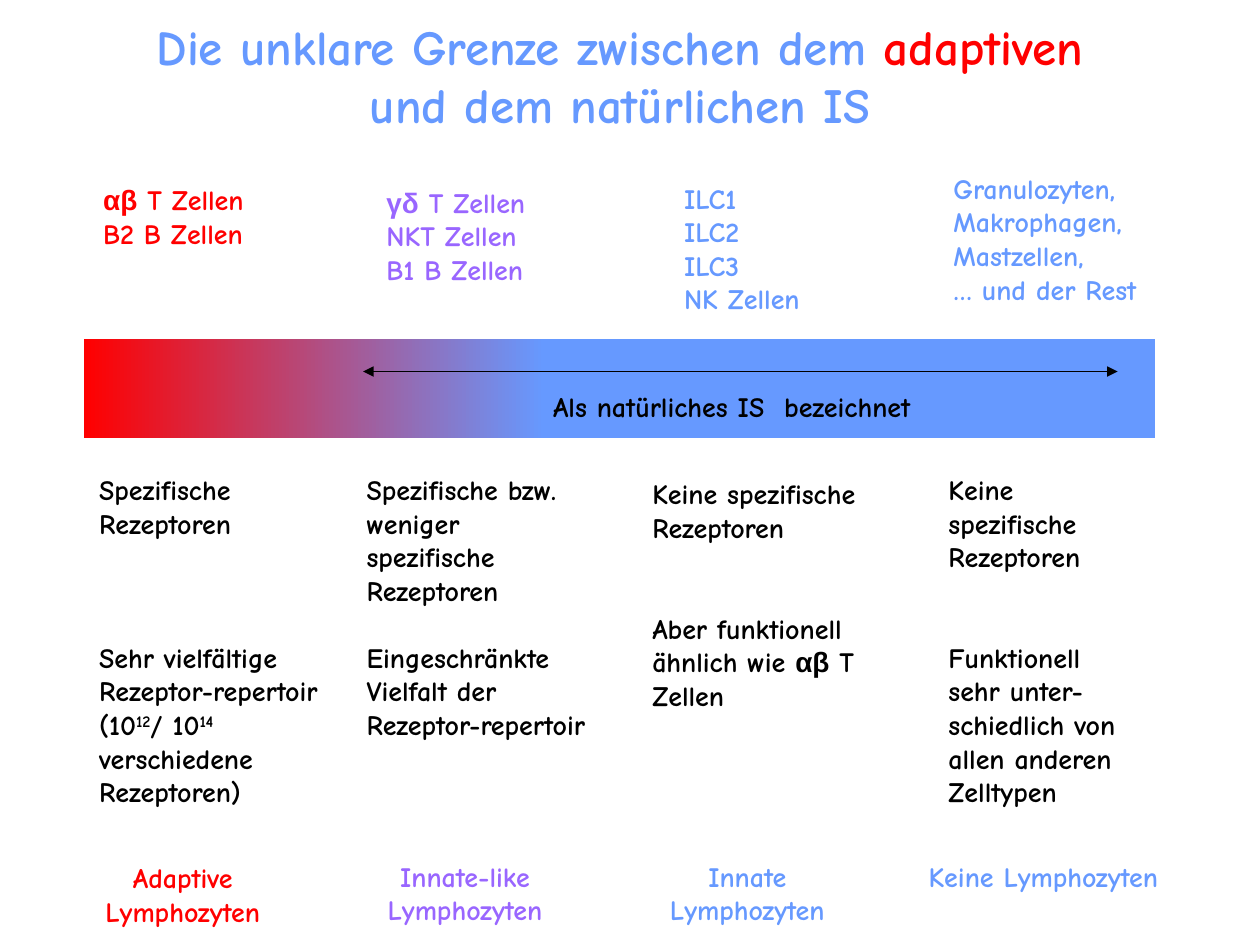
from dataclasses import dataclass

import pptx
import pptx.dml.color
import pptx.enum.dml
import pptx.enum.shapes
import pptx.enum.text
import pptx.oxml
import pptx.oxml.ns
import pptx.util
from pptx.util import Cm

RGB = pptx.dml.color.RGBColor.from_string
LEFT = pptx.enum.text.PP_ALIGN.LEFT
CENTER = pptx.enum.text.PP_ALIGN.CENTER


@dataclass(frozen=True)
class Theme:
    adaptive: str = "FF0000"
    innate_like: str = "9966FF"
    innate: str = "6699FF"
    ink: str = "000000"
    font: str = "Comic Neue"
    greek_font: str = "Arial"
    title_size: int = 28
    body_size: int = 16
    line_pitch: float = 19.2


THEME = Theme()


def greek(letters):
    return letters, {"font": THEME.greek_font}


def superscript(digits):
    return digits, {"baseline": 30000}


def add_run(paragraph, text, color, size, font=THEME.font, baseline=None):
    run = paragraph.add_run()
    run.text = text
    run.font.name = font
    run.font.size = pptx.util.Pt(size)
    run.font.bold = True
    run.font.color.rgb = RGB(color)
    if baseline:
        run.font._element.set("baseline", str(baseline))


def write(slide, box, paragraphs, color=THEME.ink, size=THEME.body_size,
          align=LEFT, wrap=True, gap_lines=0):
    """Each paragraph is a string or a list of strings and (string, format) pairs."""
    frame = slide.shapes.add_textbox(*map(Cm, box)).text_frame
    frame.word_wrap = wrap
    frame.auto_size = pptx.enum.text.MSO_AUTO_SIZE.SHAPE_TO_FIT_TEXT
    for index, parts in enumerate(paragraphs):
        paragraph = frame.add_paragraph() if index else frame.paragraphs[0]
        paragraph.alignment = align
        if index and gap_lines:
            paragraph.space_before = pptx.util.Pt(gap_lines * THEME.line_pitch)
        for part in [parts] if isinstance(parts, str) else parts:
            text, changes = (part, {}) if isinstance(part, str) else part
            add_run(paragraph, text, **{"color": color, "size": size, **changes})


def add_spectrum(slide, box):
    """Bar that fades from the adaptive to the innate colour."""
    bar = slide.shapes.add_shape(
        pptx.enum.shapes.MSO_SHAPE.RECTANGLE, *map(Cm, box))
    bar.shadow.inherit = False
    bar.line.fill.background()
    bar.fill.gradient()
    bar.fill.gradient_angle = 180
    stops = ((0.57, THEME.innate), (1, THEME.adaptive))
    for stop, (position, color) in zip(bar.fill.gradient_stops, stops):
        stop.position = position
        stop.color.rgb = RGB(color)


def add_double_arrow(slide, start, end, y):
    arrow = slide.shapes.add_connector(
        pptx.enum.shapes.MSO_CONNECTOR.STRAIGHT, Cm(start), Cm(y), Cm(end), Cm(y))
    arrow.line.color.rgb = RGB(THEME.ink)
    arrow.line.width = pptx.util.Pt(0.75)
    line = arrow.line._get_or_add_ln()
    for tag in ("a:headEnd", "a:tailEnd"):
        tip = pptx.oxml.parse_xml(f'<{tag} {pptx.oxml.ns.nsdecls("a")} type="triangle"/>')
        line.append(tip)
    arrow._element.spPr.append(
        pptx.oxml.parse_xml(f'<a:effectLst {pptx.oxml.ns.nsdecls("a")}/>'))


def add_cells(slide):
    groups = (
        ((1.83, 3.56, 3.73, 1.63), THEME.adaptive,
         [[greek("αβ"), " T Zellen"], "B2 B Zellen"]),
        ((7.54, 3.61, 3.73, 2.31), THEME.innate_like,
         [[greek("γδ"), " T Zellen"], "NKT Zellen", "B1 B Zellen"]),
        ((13.54, 3.53, 3.23, 3), THEME.innate,
         ["ILC1", "ILC2", "ILC3", "NK Zellen"]),
        ((18.97, 3.33, 4.72, 3), THEME.innate,
         ["Granulozyten,", "Makrophagen,", "Mastzellen,", "… und der Rest"]),
    )
    for box, color, cells in groups:
        write(slide, box, cells, color=color, wrap=False)


def add_receptors(slide):
    descriptions = (
        ((1.75, 9.4, 5.13, 7.77), 3,
         ["Spezifische Rezeptoren",
          ["Sehr vielfältige Rezeptor-repertoir (10", superscript("12"), "/ 10",
           superscript("14 "), "verschiedene Rezeptoren)"]]),
        ((7.14, 9.4, 4.95, 6.4), 1,
         ["Spezifische bzw. weniger spezifische Rezeptoren",
          "Eingeschränkte Vielfalt der Rezeptor-repertoir"]),
        ((12.9, 9.49, 5, 6.4), 2,
         ["Keine spezifische Rezeptoren",
          ["Aber funktionell ähnlich wie ", greek("αβ"), " T Zellen"]]),
        ((18.87, 9.4, 4.34, 7.09), 2,
         ["Keine spezifische Rezeptoren",
          "Funktionell sehr unter-schiedlich von allen anderen Zelltypen"]),
    )
    for box, gap_lines, paragraphs in descriptions:
        write(slide, box, paragraphs, gap_lines=gap_lines)


def add_categories(slide):
    categories = (
        (1.12, 17.23, THEME.adaptive, "Adaptive Lymphozyten"),
        (6.81, 17.2, THEME.innate_like, "Innate-like Lymphozyten"),
        (12.5, 17.2, THEME.innate, "Innate Lymphozyten"),
        (18.47, 17.2, THEME.innate, "Keine Lymphozyten"),
    )
    for left, top, color, name in categories:
        write(slide, (left, top, 5.13, 1.63), [name], color=color, align=CENTER)


def main():
    deck = pptx.Presentation()
    deck.slide_width, deck.slide_height = Cm(25.4), Cm(19.05)
    slide = deck.slides.add_slide(deck.slide_layouts[6])

    write(slide, (2.36, 0.2, 20.27, 2.64),
          [["Die unklare Grenze zwischen dem ",
            ("adaptiven", {"color": THEME.adaptive}),
            " und dem natürlichen IS"]],
          color=THEME.innate, size=THEME.title_size, align=CENTER)
    add_cells(slide)
    add_spectrum(slide, (1.7, 6.83, 21.59, 2.01))
    add_double_arrow(slide, 7.32, 22.53, 7.49)
    write(slide, (10.9, 7.72, 9.83, 0.94), ["Als natürliches IS  bezeichnet"])
    add_receptors(slide)
    add_categories(slide)

    deck.save("out.pptx")


if __name__ == "__main__":
    main()
